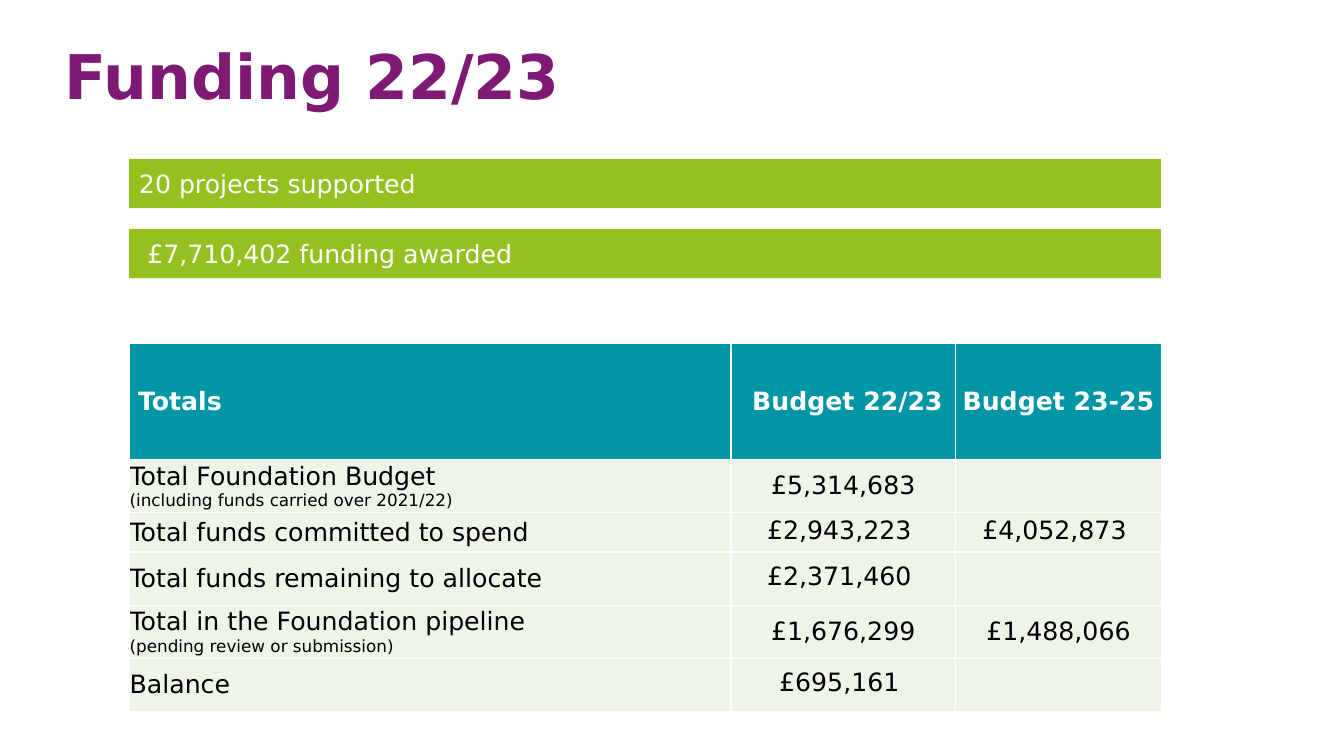
from lxml.etree import SubElement as Sub
from pptx import Presentation
from pptx.dml.color import RGBColor as Color
from pptx.enum.shapes import MSO_SHAPE as Shape
from pptx.enum.text import MSO_ANCHOR as Anchor, MSO_AUTO_SIZE as Auto, PP_ALIGN as Align
from pptx.oxml.ns import qn
from pptx.util import Pt

WHITE = Color(0xFF, 0xFF, 0xFF)
BLACK = Color(0, 0, 0)
PURPLE = Color(0x7E, 0x19, 0x74)
GREEN = Color(0x94, 0xC1, 0x1F)
TEAL = Color(0x00, 0x96, 0xA6)
PALE = Color(0xEE, 0xF4, 0xE8)

LEFT, WIDTH = 92.2, 737
COLS = [429.5, 160.5, 147]
ROWS = [82.8, 38, 28, 38, 38, 38]
HEAD = ["Totals", "Budget 22/23", "Budget 23-25"]
BODY = [
    ["Total Foundation Budget\n(including funds carried over 2021/22)", "£5,314,683", ""],
    ["Total funds committed to spend", "£2,943,223", "£4,052,873"],
    ["Total funds remaining to allocate", "£2,371,460", ""],
    ["Total in the Foundation pipeline\n(pending review or submission)", "£1,676,299", "£1,488,066"],
    ["Balance", "£695,161", ""],
]
HEAD_PADS = [(6, 0, 0, 0), (6, 0, 0, 0), (0, 0, 0, 0)]
FLAT = (0, 0, 0, 0)
RAISED = (0.7, 0.7, 6.4, 3.6)
RAISED_ROWS = (2, 3, 5)


def write(frame, text, font="DejaVu Sans", size=18, note=12, color=BLACK,
          bold=False, align=Align.LEFT):
    for i, line in enumerate(text.split("\n")):
        par = frame.add_paragraph() if i else frame.paragraphs[0]
        par.alignment = align
        par.font.size = Pt(note if i else size)
        if line:
            run = par.add_run()
            run.text = line
            run.font.name = font
            run.font.size = Pt(note if i else size)
            run.font.bold = bold
            run.font.color.rgb = color


class Deck:
    def __init__(self):
        self.file = Presentation()
        self.file.slide_width, self.file.slide_height = Pt(960), Pt(540)
        self.slide = self.file.slides.add_slide(self.file.slide_layouts[6])

    def title(self, text, x, y, w, h):
        frame = self.slide.shapes.add_textbox(Pt(x), Pt(y), Pt(w), Pt(h)).text_frame
        frame.word_wrap = True
        frame.auto_size = Auto.SHAPE_TO_FIT_TEXT
        write(frame, text, size=44, color=PURPLE, bold=True)

    def bar(self, text, x, y, w, h, pad):
        bar = self.slide.shapes.add_shape(Shape.RECTANGLE, Pt(x), Pt(y), Pt(w), Pt(h))
        bar.shadow.inherit = False
        bar.fill.solid()
        bar.fill.fore_color.rgb = GREEN
        bar.line.fill.background()
        frame = bar.text_frame
        frame.word_wrap = True
        frame.margin_left = Pt(pad)
        frame.vertical_anchor = Anchor.MIDDLE
        write(frame, text, color=WHITE)

    def cell(self, cell, text, fill, pads, **style):
        props = cell._tc.get_or_add_tcPr()
        for side in ("a:lnL", "a:lnR", "a:lnT", "a:lnB"):
            line = Sub(props, qn(side), w=str(Pt(1)))
            Sub(Sub(line, qn("a:solidFill")), qn("a:srgbClr"), val=str(WHITE))
        cell.fill.solid()
        cell.fill.fore_color.rgb = fill
        cell.vertical_anchor = Anchor.MIDDLE
        (cell.margin_left, cell.margin_top,
         cell.margin_right, cell.margin_bottom) = map(Pt, pads)
        write(cell.text_frame, text, **style)

    def table(self, x, y):
        table = self.slide.shapes.add_table(
            len(ROWS), len(COLS), Pt(x), Pt(y), Pt(sum(COLS)), Pt(sum(ROWS))).table
        table.horz_banding = False
        for col, width in zip(table.columns, COLS):
            col.width = Pt(width)
        for row, height in zip(table.rows, ROWS):
            row.height = Pt(height)
        for r, texts in enumerate([HEAD] + BODY):
            for c, text in enumerate(texts):
                align = Align.CENTER if c else Align.LEFT
                if r == 0:
                    self.cell(table.cell(r, c), text, TEAL, HEAD_PADS[c],
                              color=WHITE, bold=True, align=align)
                else:
                    pads = RAISED if c and r in RAISED_ROWS else FLAT
                    self.cell(table.cell(r, c), text, PALE, pads, align=align)


def main():
    deck = Deck()
    deck.title("Funding 22/23", 39, 23.8, 708.5, 60.5)
    deck.table(LEFT + 0.4, 245.5)
    bars = [("20 projects supported", 7.2), ("£7,710,402 funding awarded", 13)]
    for i, (text, pad) in enumerate(bars):
        deck.bar(text, LEFT, 113.5 + 50 * i, WIDTH, 35.2, pad)
    deck.file.save("out.pptx")


if __name__ == "__main__":
    main()
